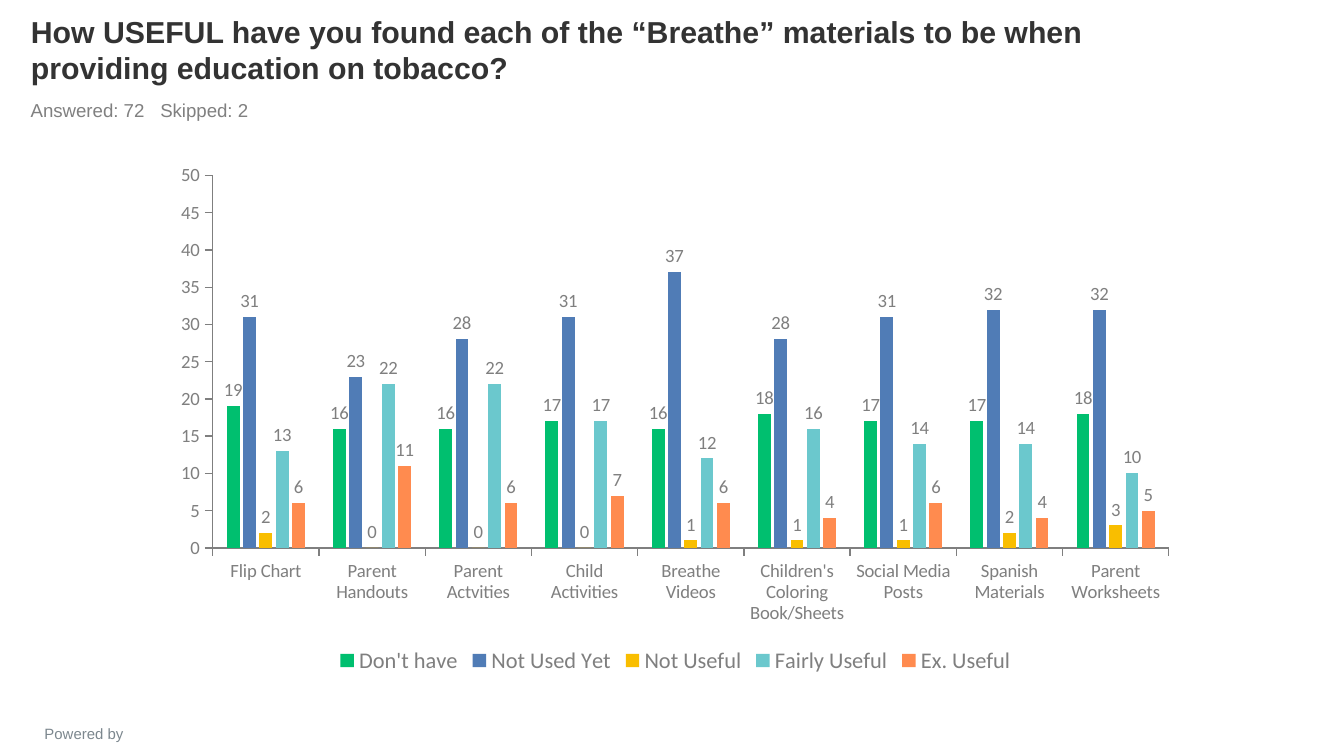
from lxml import etree
from pptx import Presentation
from pptx.chart.data import CategoryChartData
from pptx.dml.color import RGBColor
from pptx.enum.chart import (XL_CHART_TYPE, XL_LABEL_POSITION, XL_LEGEND_POSITION,
                             XL_TICK_LABEL_POSITION, XL_TICK_MARK)
from pptx.enum.text import MSO_ANCHOR, PP_ALIGN
from pptx.oxml.ns import qn
from pptx.util import Cm, Pt

CLUSTERED = XL_CHART_TYPE.COLUMN_CLUSTERED
OUTSIDE_END = XL_LABEL_POSITION.OUTSIDE_END
BOTTOM = XL_LEGEND_POSITION.BOTTOM
LOW = XL_TICK_LABEL_POSITION.LOW
TICK_OUT, TICK_NONE = XL_TICK_MARK.OUTSIDE, XL_TICK_MARK.NONE
LEFT, CENTER = PP_ALIGN.LEFT, PP_ALIGN.CENTER
ANCHOR_TOP, ANCHOR_BOTTOM = MSO_ANCHOR.TOP, MSO_ANCHOR.BOTTOM

DARK = RGBColor(0x33, 0x33, 0x33)
GRAY = RGBColor(0x80, 0x80, 0x80)
AXIS_GRAY = RGBColor(0x7F, 0x7F, 0x7F)
SLATE = RGBColor(0x7C, 0x87, 0x8E)
GREEN = RGBColor(0x00, 0xBF, 0x6F)
BLUE = RGBColor(0x50, 0x7C, 0xB6)
YELLOW = RGBColor(0xF9, 0xBE, 0x00)
TEAL = RGBColor(0x6B, 0xC8, 0xCD)
ORANGE = RGBColor(0xFF, 0x8B, 0x4F)

TITLE = ("How USEFUL have you found each of the “Breathe” materials to be "
         "when providing education on tobacco?")
RESPONSES = "Answered: 72\tSkipped: 2"
FOOTER = "Powered by"
MATERIALS = ["Flip Chart", "Parent Handouts", "Parent Actvities", "Child Activities",
             "Breathe Videos", "Children's Coloring Book/Sheets",
             "Social Media Posts", "Spanish Materials", "Parent Worksheets"]
RATINGS = [
    ("Don't have", GREEN, [19, 16, 16, 17, 16, 18, 17, 17, 18]),
    ("Not Used Yet", BLUE, [31, 23, 28, 31, 37, 28, 31, 32, 32]),
    ("Not Useful", YELLOW, [2, 0, 0, 0, 1, 1, 1, 2, 3]),
    ("Fairly Useful", TEAL, [13, 22, 22, 17, 12, 16, 14, 14, 10]),
    ("Ex. Useful", ORANGE, [6, 11, 6, 7, 6, 4, 6, 4, 5]),
]
PLOT_AREA = {"x": 0.05, "y": 0.04, "w": 0.93, "h": 0.71}


def write(sp, text, size, color, bold=False, align=LEFT, anchor=ANCHOR_TOP, tab=None):
    tf = sp.text_frame
    tf.word_wrap = True
    tf.vertical_anchor = anchor
    p = tf.paragraphs[0]
    p.alignment = align
    if tab:
        tabs = etree.SubElement(p._p.get_or_add_pPr(), qn("a:tabLst"))
        etree.SubElement(tabs, qn("a:tab"), pos=str(tab), algn="l")
    r = p.add_run()
    r.text = text
    set_font(r.font, size, color, "Arial", bold)


def set_font(font, size, color, name="Calibri", bold=False):
    font.size, font.name, font.bold = Pt(size), name, bold
    font.color.rgb = color


def place_plot(chart, fractions):
    """Fix the inner plot area as fractions of the chart frame."""
    area = chart._chartSpace.chart.plotArea
    for old in area.findall(qn("c:layout")):
        area.remove(old)
    layout = etree.Element(qn("c:layout"))
    manual = etree.SubElement(layout, qn("c:manualLayout"))
    settings = {"layoutTarget": "inner", "xMode": "edge", "yMode": "edge", **fractions}
    for tag, value in settings.items():
        etree.SubElement(manual, qn(f"c:{tag}"), val=str(value))
    area.insert(0, layout)


def add_ratings_chart(slide):
    data = CategoryChartData(number_format="0")
    data.categories = MATERIALS
    for name, _, values in RATINGS:
        data.add_series(name, values)
    chart = slide.shapes.add_chart(CLUSTERED, Cm(3.05), Cm(2.92), Cm(19.43), Cm(9.91),
                                   data).chart
    set_font(chart.font, 18, DARK)
    chart.has_title = False
    chart.has_legend = True
    chart.legend.position = BOTTOM
    chart.legend.include_in_layout = False
    set_font(chart.legend.font, 12, AXIS_GRAY)

    plot = chart.plots[0]
    plot.gap_width, plot.overlap = 219, -27
    plot.vary_by_categories = False
    for series, (_, color, _) in zip(plot.series, RATINGS):
        series.format.fill.solid()
        series.format.fill.fore_color.rgb = color
        series.invert_if_negative = False
        labels = series.data_labels
        labels.show_value = True
        labels.position = OUTSIDE_END
        labels.number_format, labels.number_format_is_linked = "0", False
        set_font(labels.font, 10, AXIS_GRAY)

    for axis in (chart.category_axis, chart.value_axis):
        axis.has_major_gridlines = False
        axis.major_tick_mark, axis.minor_tick_mark = TICK_OUT, TICK_NONE
        axis.format.line.color.rgb = AXIS_GRAY
        axis.format.line.width = Pt(0.75)
        set_font(axis.tick_labels.font, 10, AXIS_GRAY)
    chart.category_axis.tick_label_position = LOW
    values = chart.value_axis
    values.minimum_scale, values.maximum_scale, values.major_unit = 0, 50, 5
    values.tick_labels.number_format = "0"
    values.tick_labels.number_format_is_linked = False
    place_plot(chart, PLOT_AREA)


prs = Presentation()
prs.slide_width, prs.slide_height = Cm(25.4), Cm(14.28)
slide = prs.slides.add_slide(prs.slide_layouts[5])

title = slide.shapes.title
title.left, title.top, title.width, title.height = Cm(0.33), Cm(0.23), Cm(22.86), Cm(1.52)
write(title, TITLE, 16.2, DARK, bold=True, anchor=ANCHOR_BOTTOM)

responses = slide.shapes.add_textbox(Cm(0.33), Cm(1.75), Cm(22.86), Cm(0.66))
write(responses, RESPONSES, 10, GRAY, tab=Cm(2.45))

add_ratings_chart(slide)

footer = slide.shapes.add_textbox(Cm(0.13), Cm(13.56), Cm(2.92), Cm(0.46))
write(footer, FOOTER, 8, SLATE, align=CENTER)

prs.save("out.pptx")
